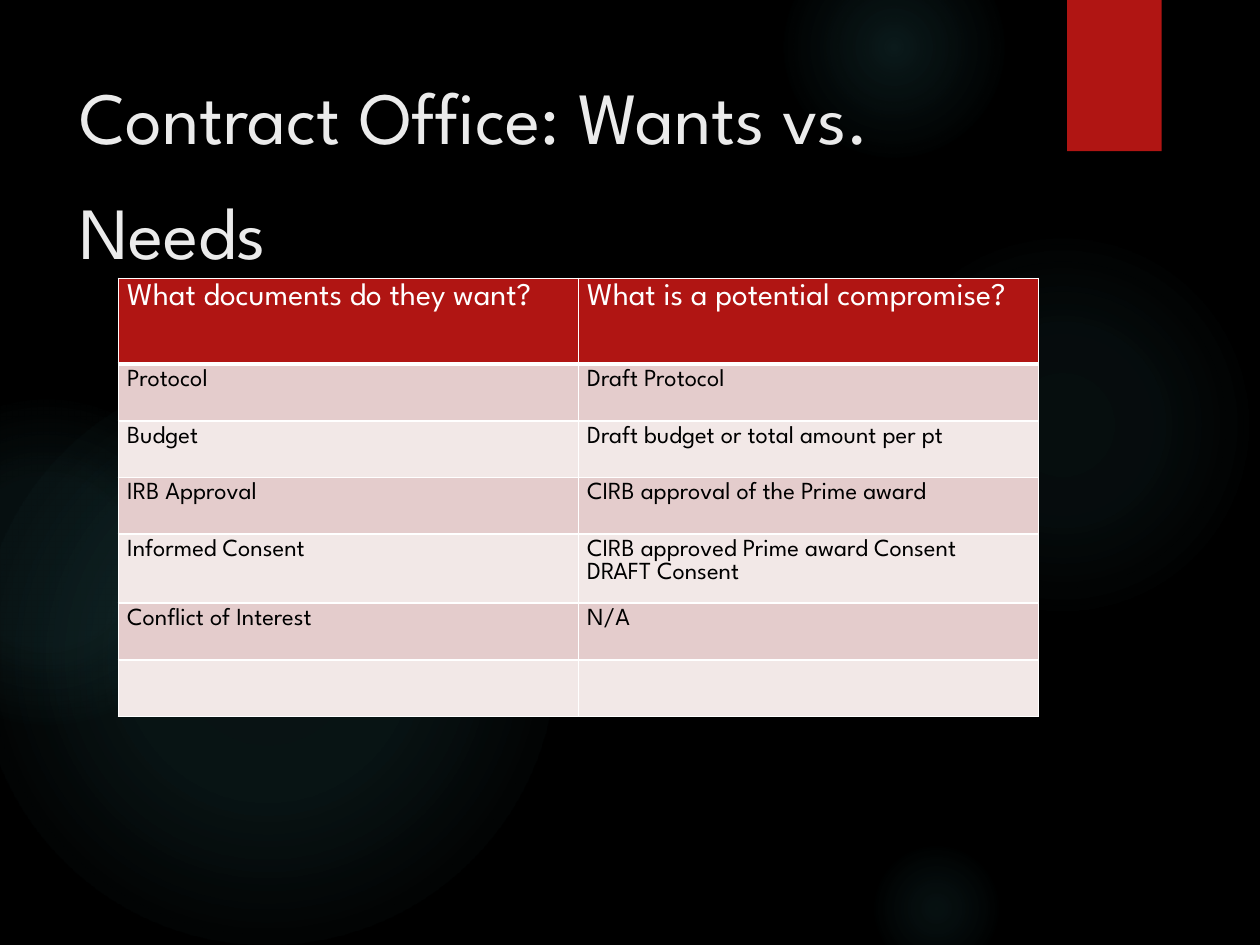
"""Build the contract office slide: wanted documents and their compromises."""
from lxml import etree
from pptx import Presentation, util as u
from pptx.dml.color import RGBColor
from pptx.enum import shapes, text
from pptx.oxml import parse_xml

FONT = "League Spartan"
NS = 'xmlns:a="http://schemas.openxmlformats.org/drawingml/2006/main"'
RED, WHITE, TEAL = "B01513", "FFFFFF", "50B9C1"


def paint(fill, color):
    fill.solid()
    fill.fore_color.rgb = RGBColor.from_string(color)


def style(paragraph, size, color):
    paragraph.font.name = FONT
    paragraph.font.size = u.Pt(size)
    paragraph.font.color.rgb = RGBColor.from_string(color)


deck = Presentation()
deck.slide_width, deck.slide_height = u.Inches(10), u.Inches(7.5)
slide = deck.slides.add_slide(deck.slide_layouts[6])
paint(slide.background.fill, "000000")

glows = [
    (6.89, 1.83, 3.08, [(0, 7), (36, 6), (69, 0)]),
    (6.22, -0.5, 1.75, [(0, 14), (36, 7), (73, 0)]),
    (6.89, 6.67, 1.08, [(0, 9), (36, 5), (66, 0)]),
    (-0.17, 2.92, 4.58, [(0, 11), (36, 10), (75, 0)]),
    (-0.92, 3.17, 2.58, [(0, 8), (36, 8), (72, 0)]),
]
for left, top, size, stops in glows:
    glow = slide.shapes.add_shape(
        shapes.MSO_SHAPE.OVAL, *map(u.Inches, (left, top, size, size)))
    glow.shadow.inherit = False
    glow.line.fill.background()
    fade = "".join(
        f'<a:gs pos="{pos * 1000}"><a:srgbClr val="{TEAL}">'
        f'<a:alpha val="{alpha * 1000}"/></a:srgbClr></a:gs>'
        for pos, alpha in stops)
    glow._element.spPr.find("{*}prstGeom").addnext(parse_xml(
        f'<a:gradFill {NS}><a:gsLst>{fade}</a:gsLst><a:path path="circle">'
        '<a:fillToRect l="50000" t="50000" r="50000" b="50000"/></a:path></a:gradFill>'))

ribbon = slide.shapes.add_shape(
    shapes.MSO_SHAPE.RECTANGLE, *map(u.Inches, (8.47, 0, 0.75, 1.2)))
ribbon.shadow.inherit = False
ribbon.line.fill.background()
paint(ribbon.fill, RED)

title = slide.shapes.add_textbox(*map(u.Inches, (0.53, 0.5, 7.72, 1.53))).text_frame
title.word_wrap = True
title.vertical_anchor = text.MSO_ANCHOR.MIDDLE
title.text = "Contract Office: Wants vs. Needs"
title.paragraphs[0].line_spacing = 1.3
style(title.paragraphs[0], 42, "EBEBEB")

documents = [
    ("What documents do they want?", "What is a potential compromise?"),
    ("Protocol", "Draft Protocol"),
    ("Budget", "Draft budget or total amount per pt"),
    ("IRB Approval", "CIRB approval of the Prime award"),
    ("Informed Consent", "CIRB approved Prime award Consent\nDRAFT Consent"),
    ("Conflict of Interest", "N/A"),
    ("", ""),
]
heights = [0.68, 0.45, 0.45, 0.45, 0.53, 0.45, 0.45]
table = slide.shapes.add_table(
    len(documents), 2, *map(u.Inches, (0.94, 2.21, 7.3, sum(heights)))).table
for row, (wording, height) in enumerate(zip(documents, heights)):
    table.rows[row].height = u.Inches(height)
    band = RED if row == 0 else ("F2E8E7", "E4CCCC")[row % 2]
    for column, words in enumerate(wording):
        cell = table.cell(row, column)
        cell.margin_left = cell.margin_right = u.Inches(0.07)
        cell.margin_top = cell.margin_bottom = u.Inches(0.04)
        cell.text = words
        for paragraph in cell.text_frame.paragraphs:
            style(paragraph, 14 if row else 18, "000000" if row else WHITE)
        borders = cell._tc.get_or_add_tcPr()
        for side in "LRTB":
            weight = 3 if row == 0 and side == "B" else 1
            borders.append(etree.fromstring(
                f'<a:ln{side} {NS} w="{u.Pt(weight)}"><a:solidFill>'
                f'<a:srgbClr val="{WHITE}"/></a:solidFill></a:ln{side}>'))
        paint(cell.fill, band)

deck.save("out.pptx")
